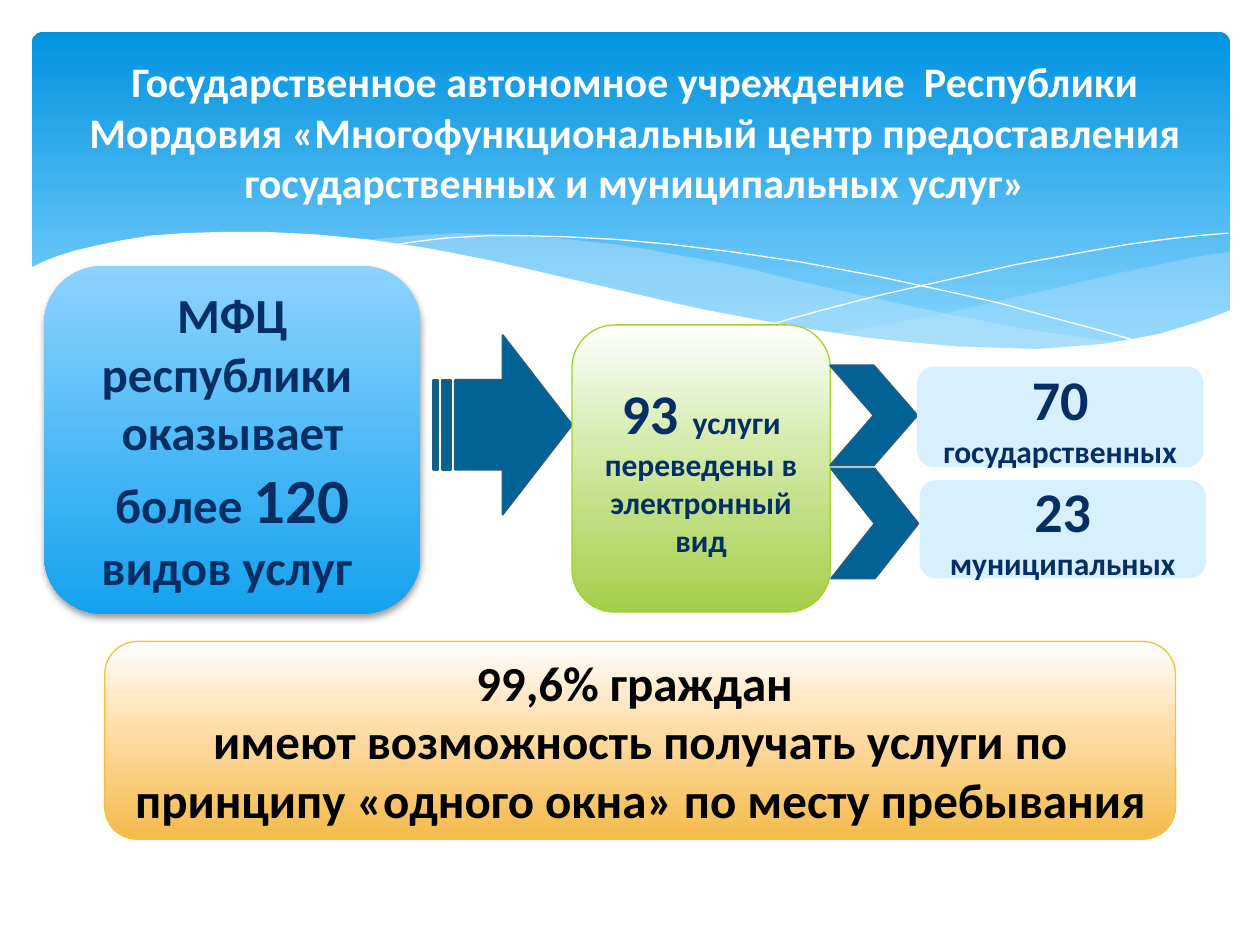
from lxml import etree
from pptx import Presentation
from pptx.dml.color import RGBColor
from pptx.enum.shapes import MSO_SHAPE
from pptx.enum.text import MSO_ANCHOR, MSO_AUTO_SIZE, PP_ALIGN
from pptx.oxml.ns import qn
from pptx.util import Cm, Pt

ROUND = MSO_SHAPE.ROUNDED_RECTANGLE
ARROW = MSO_SHAPE.STRIPED_RIGHT_ARROW
CHEVRON = MSO_SHAPE.CHEVRON
MIDDLE = MSO_ANCHOR.MIDDLE
CENTER = PP_ALIGN.CENTER
FIXED = MSO_AUTO_SIZE.NONE

COLORS = {
    "white": "FFFFFF", "black": "000000", "navy": "052E65",
    "deep": "0293E0", "sky": "83D3FE", "mist": "C6E7FC",
    "pale": "8CD3FF", "blue": "14A2EF", "teal": "016296", "edge": "195F84",
    "lime": "D1EAA7", "green": "A4CF4A", "leaf": "A5D028", "ice": "D6F0FF",
    "cream": "FFDDAA", "amber": "F4BB4A", "gold": "F5C040",
}

# Wave outlines, in hundredths of an inch
BACK = [(975, 200), (948, 204), (921, 210), (891, 216), (861, 223), (832, 230),
        (779, 242), (729, 253), (661, 265), (691, 269), (719, 272), (745, 275),
        (769, 277), (803, 278), (835, 277), (863, 275), (889, 272), (913, 267),
        (935, 262), (949, 257), (963, 252), (976, 247), (976, 200)]
FRONT = [(893, 273), (866, 269), (807, 260), (741, 247), (668, 231), (629, 222),
         (598, 214), (569, 208), (541, 203), (514, 198), (489, 194), (442, 189),
         (399, 186), (361, 185), (328, 187), (286, 191), (323, 196), (362, 203),
         (404, 211), (449, 222), (530, 240), (584, 252), (634, 261), (680, 268),
         (722, 274), (761, 277), (796, 278), (838, 278), (867, 276), (884, 274)]
FALL = [(309, 195), (328, 192), (353, 189), (387, 187), (416, 187), (450, 188),
        (489, 190), (533, 194), (582, 200), (636, 208), (695, 219), (760, 233),
        (795, 241), (831, 251), (869, 261), (907, 272)]
RISE = [(613, 257), (653, 246), (695, 235), (748, 223), (806, 210), (866, 199),
        (895, 194), (924, 190), (951, 187), (975, 185)]
EDGE = [(977, 246), (959, 253), (940, 259), (920, 265), (899, 269), (875, 273),
        (850, 275), (823, 277), (793, 276), (761, 275), (726, 272), (688, 268),
        (648, 262), (603, 254), (555, 245), (503, 233), (447, 220), (391, 207),
        (340, 197), (292, 190), (250, 186), (211, 184), (177, 184), (146, 185),
        (119, 187), (95, 191), (76, 195), (59, 199), (46, 203), (36, 207),
        (23, 213), (23, 329), (977, 329)]


def rgb(name):
    return RGBColor.from_string(COLORS[name])


def node(parent, tag, **values):
    return etree.SubElement(parent, qn(tag), values)


class Deck:
    font = "Calibri"
    unit = Cm(0.0254)

    def __init__(self):
        self.prs = Presentation()
        self.prs.slide_width, self.prs.slide_height = Cm(25.4), Cm(19.05)
        self.slide = self.prs.slides.add_slide(self.prs.slide_layouts[5])

    def paint(self, shape, fill=None, line=None, width=0, alpha=None):
        """Fill is a colour name, or a list of (percent, colour) stops."""
        shape.shadow.inherit = False
        if isinstance(fill, list):
            shape.fill.gradient()
            shape.fill.gradient_angle = 270
            stops = shape._element.spPr.find(".//" + qn("a:gsLst"))
            for old in list(stops):
                stops.remove(old)
            for place, name in fill:
                stop = node(stops, "a:gs", pos=str(place * 1000))
                node(stop, "a:srgbClr", val=COLORS[name])
        elif fill:
            shape.fill.solid()
            shape.fill.fore_color.rgb = rgb(fill)
            if alpha:
                color = shape._element.spPr.find(".//" + qn("a:srgbClr"))
                node(color, "a:alpha", val=str(alpha * 1000))
        else:
            shape.fill.background()
        if line:
            shape.line.color.rgb = rgb(line)
            shape.line.width = Pt(width)
        else:
            shape.line.fill.background()

    def shadow(self, shape):
        effects = shape._element.spPr.find(qn("a:effectLst"))
        outer = node(effects, "a:outerShdw", blurRad=str(Pt(4)), dist=str(Pt(2)),
                     dir="5400000", rotWithShape="0")
        color = node(outer, "a:srgbClr", val=COLORS["black"])
        node(color, "a:alpha", val="38000")

    def label(self, shape, paras, color):
        """Each paragraph is a list of (text, size) runs."""
        frame = shape.text_frame
        look = {"word_wrap": True, "auto_size": FIXED, "vertical_anchor": MIDDLE}
        for key, value in look.items():
            setattr(frame, key, value)
        for i, runs in enumerate(paras):
            para = frame.add_paragraph() if i else frame.paragraphs[0]
            para.alignment = CENTER
            for text, size in runs:
                run = para.add_run()
                run.text = text
                look = {"name": self.font, "size": Pt(size), "bold": True}
                for key, value in look.items():
                    setattr(run.font, key, value)
                run.font.color.rgb = rgb(color)

    def shape(self, kind, box, paras=(), color="navy", **style):
        shape = self.slide.shapes.add_shape(kind, *map(Cm, box))
        self.paint(shape, **style)
        if paras:
            self.label(shape, paras, color)
        return shape

    def wave(self, points, close=True, **style):
        pen = self.slide.shapes.build_freeform(*points[0], scale=self.unit)
        pen.add_line_segments(points[1:], close=close)
        self.paint(pen.convert_to_shape(), **style)

    def title(self, box, text, size):
        title = self.slide.shapes.title
        sides = zip(("left", "top", "width", "height"), map(Cm, box))
        for key, value in sides:
            setattr(title, key, value)
        self.label(title, [[(text, size)]], "white")
        self.slide.shapes._spTree.append(title._element)


def main():
    deck = Deck()

    # Header band with waves
    band = deck.shape(ROUND, (0.64, 0.64, 24.16, 6.86), fill=[(0, "deep"), (90, "sky")])
    band.adjustments[0] = 0.034
    deck.wave(BACK, fill="mist", alpha=29)
    deck.wave(FRONT, fill="mist", alpha=40)
    for curve in (FALL, RISE):
        deck.wave(curve, close=False, line="white")
    deck.wave(EDGE, fill="white")
    deck.title((1.09, 0.91, 23.42, 3.48),
               "Государственное автономное учреждение  Республики Мордовия "
               "«Многофункциональный центр предоставления государственных "
               "и муниципальных услуг»", 24)

    # Total of services
    total = deck.shape(ROUND, (0.89, 5.36, 7.59, 7.01),
                       [[("МФЦ республики  оказывает более ", 28), ("120", 36),
                         (" видов услуг ", 28)]],
                       fill=[(0, "pale"), (100, "blue")])
    deck.shadow(total)

    # Services online
    solid = {"fill": "teal", "line": "edge", "width": 1.25}
    deck.shape(ARROW, (8.74, 6.76, 2.79, 3.61), **solid)
    deck.shape(ROUND, (11.53, 6.55, 5.21, 5.79),
               [[("93", 32), ("  услуги переведены в электронный вид", 18)]],
               fill=[(0, "white"), (44, "lime"), (100, "green")],
               line="leaf", width=0.75)

    # Split by level
    rows = [
        ("70", " государственных", (16.74, 7.37, 1.75, 2.01), (18.49, 7.39, 5.77, 2.03)),
        ("23", " муниципальных", (16.76, 9.45, 1.75, 2.21), (18.54, 9.68, 5.77, 1.98)),
    ]
    for count, name, mark, pill in rows:
        deck.shape(CHEVRON, mark, **solid)
        deck.shape(ROUND, pill, [[(count, 32), (name, 18)]], fill="ice")

    # Conclusion
    deck.shape(ROUND, (2.11, 12.93, 21.59, 3.99),
               [[("99,6% граждан ", 28)],
                [("имеют возможность получать услуги по принципу "
                  "«одного окна» по месту пребывания", 28)]],
               "black", fill=[(0, "white"), (44, "cream"), (100, "amber")],
               line="gold", width=0.75)

    deck.prs.save("out.pptx")


if __name__ == "__main__":
    main()
